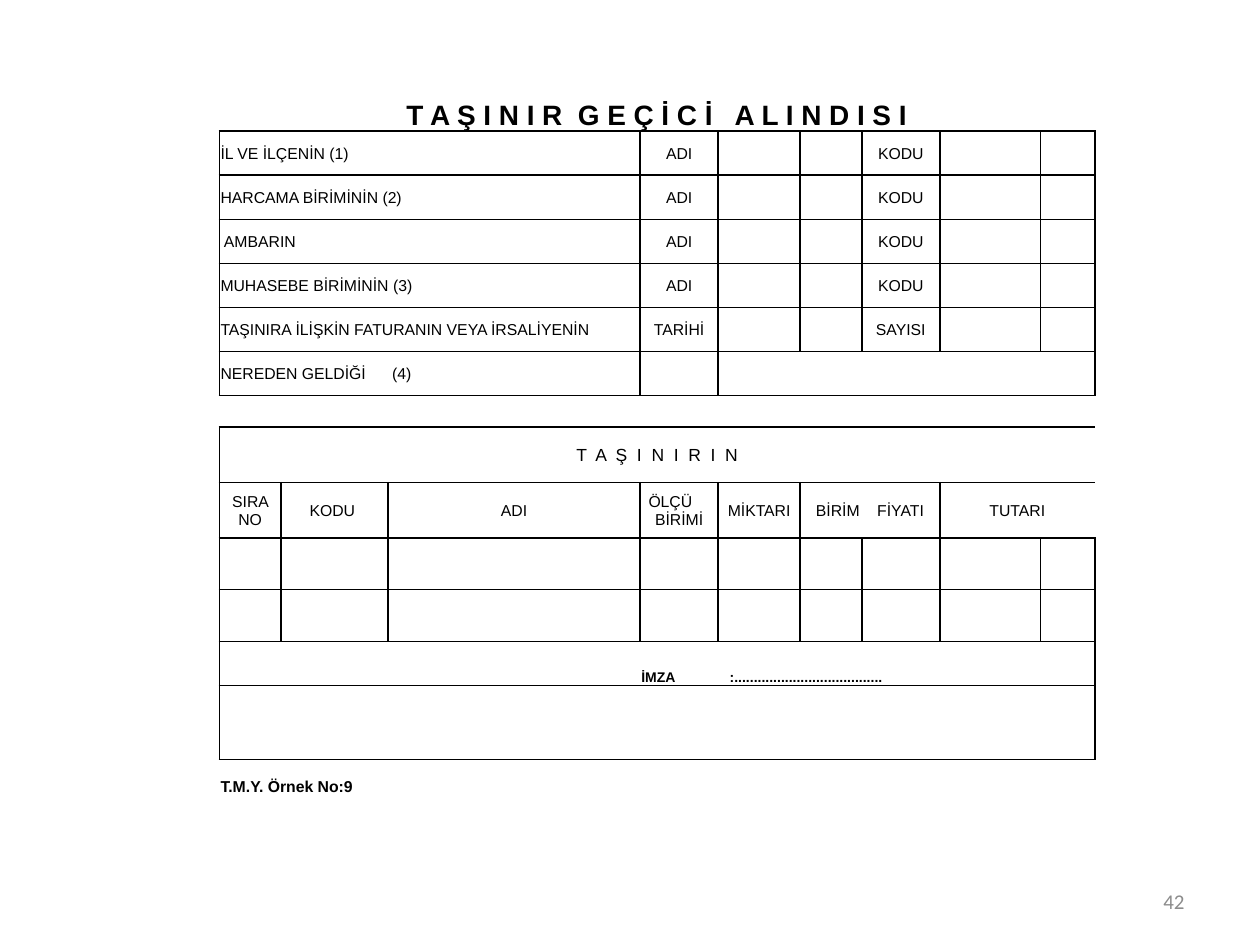
import pptx
import pptx.util
import pptx.dml.color
import pptx.enum.text
from dataclasses import dataclass
from itertools import accumulate
from lxml import etree

Inches, Pt = pptx.util.Inches, pptx.util.Pt
Align, Anchor = pptx.enum.text.PP_ALIGN, pptx.enum.text.MSO_ANCHOR
Color = pptx.dml.color.RGBColor


@dataclass(frozen=True)
class Theme:
    font: str = "Arial"
    ink: str = "000000"
    gray: str = "8C8C8C"
    title: int = 16
    head: int = 10
    body: int = 9
    sign: int = 8
    page: int = 12


theme = Theme()

# Content
title = "T A Ş I N I R  G E Ç İ C İ   A L I N D I S I"
fields = [
    ("İL VE İLÇENİN (1)", "ADI", "KODU"),
    ("HARCAMA BİRİMİNİN (2)", "ADI", "KODU"),
    (" AMBARIN", "ADI", "KODU"),
    ("MUHASEBE BİRİMİNİN (3)", "ADI", "KODU"),
    ("TAŞINIRA İLİŞKİN FATURANIN VEYA İRSALİYENİN", "TARİHİ", "SAYISI"),
]
origin = "NEREDEN GELDİĞİ      (4)"
goods = "T  A  Ş  I  N  I  R  I  N"
heads = ["SIRA NO", "KODU ", "ADI", "ÖLÇÜ     BİRİMİ", "MİKTARI",
         "BİRİM    FİYATI", "TUTARI"]
sign = "İMZA              :" + "." * 38
note = "T.M.Y. Örnek No:9"
page = "42"

# Grid: widths and heights in inches, spans in columns
left, top = 1.74, 0.44
cols = [0.49, 0.85, 2, 0.62, 0.65, 0.49, 0.62, 0.8, 0.43]
rows = [0.6] + [0.35] * 6 + [0.25] + [0.44] * 2 + [0.41] * 2 + [0.35, 0.25, 0.34, 0.29]
field_spans = [3, 1, 2, 1, 2]
goods_spans = [1, 1, 1, 1, 1, 2, 2]


def style(par, size, bold=False, color=theme.ink, font=theme.font):
    par.font.name, par.font.size, par.font.bold = font, Pt(size), bold
    par.font.color.rgb = Color.from_string(color)


def starts(spans):
    return [0, *accumulate(spans)][:-1]


prs = pptx.Presentation()
prs.slide_width, prs.slide_height = Inches(10), Inches(7.5)
slide = prs.slides.add_slide(prs.slide_layouts[6])

# Page number
box = slide.shapes.add_textbox(Inches(7.17), Inches(6.95), Inches(2.33), Inches(0.4))
frame = box.text_frame
frame.word_wrap, frame.vertical_anchor = True, Anchor.MIDDLE
par = frame.paragraphs[0]
par.text, par.alignment = page, Align.RIGHT
style(par, theme.page, color=theme.gray, font="Calibri")

# Empty form without a table style
table = slide.shapes.add_table(
    len(rows), len(cols), Inches(left), Inches(top),
    Inches(sum(cols)), Inches(sum(rows))).table
table.first_row = table.horz_banding = False
table._tbl.tblPr.find(pptx.oxml.ns.qn("a:tableStyleId")).text = (
    "{2D5ABB26-0587-4C30-8999-92F81FD0307C}")
for col, width in zip(table.columns, cols):
    col.width = Inches(width)
for row, height in zip(table.rows, rows):
    row.height = Inches(height)

edges = {}


def outline(row, col, wide, tall=1):
    for r in range(row, row + tall):
        for c in range(col, col + wide):
            sides = {"L": c == col, "R": c == col + wide - 1,
                     "T": r == row, "B": r == row + tall - 1}
            edges.setdefault((r, c), set()).update(s for s in sides if sides[s])


def write(row, col, wide, text, size=theme.body, bold=False,
          align=Align.CENTER, anchor=Anchor.MIDDLE):
    cell = table.cell(row, col)
    if wide > 1:
        cell.merge(table.cell(row, col + wide - 1))
    cell.vertical_anchor = anchor
    par = cell.text_frame.paragraphs[0]
    par.text, par.alignment = text, align
    style(par, size, bold)


# Upper block: labels with blanks between them
write(0, 0, 9, title, theme.title, True, anchor=Anchor.BOTTOM)
for r, (label, name, code) in enumerate(fields, 1):
    for c, wide, text in zip(starts(field_spans), field_spans,
                             [label, name, "", code, ""]):
        outline(r, c, wide)
        if text:
            write(r, c, wide, text, align=Align.CENTER if c else Align.LEFT)
write(6, 0, 3, origin, align=Align.LEFT)
outline(6, 0, 3)
outline(6, 3, 6)

# Lower block: goods, signature and note
write(8, 0, 9, goods, theme.head)
outline(8, 0, 9)
for c, wide, text in zip(starts(goods_spans), goods_spans, heads):
    write(9, c, wide, text)
    for r in (9, 10, 11):
        outline(r, c, wide)
write(12, 3, 5, sign, theme.sign, True, Align.LEFT, Anchor.BOTTOM)
outline(12, 0, 9, 3)
write(15, 0, 2, note, theme.body, True, Align.LEFT, Anchor.BOTTOM)

# Margins, borders and fill of every cell
for r in range(len(rows)):
    for c in range(len(cols)):
        cell = table.cell(r, c)
        cell.margin_left = cell.margin_right = cell.margin_top = Inches(0.01)
        cell.margin_bottom = 0
        par = cell.text_frame.paragraphs[0]
        if not par.text:
            style(par, theme.body)
            end = etree.SubElement(par._p, pptx.oxml.ns.qn("a:endParaRPr"))
            end.set("sz", str(theme.body * 100))
        props = cell._tc.get_or_add_tcPr()
        for side in "LRTB":
            if side in edges.get((r, c), ()):
                line = etree.SubElement(props, pptx.oxml.ns.qn("a:ln" + side), w=str(Pt(1)))
                fill = etree.SubElement(line, pptx.oxml.ns.qn("a:solidFill"))
                etree.SubElement(fill, pptx.oxml.ns.qn("a:srgbClr"), val=theme.ink)
        cell.fill.background()

prs.save("out.pptx")
